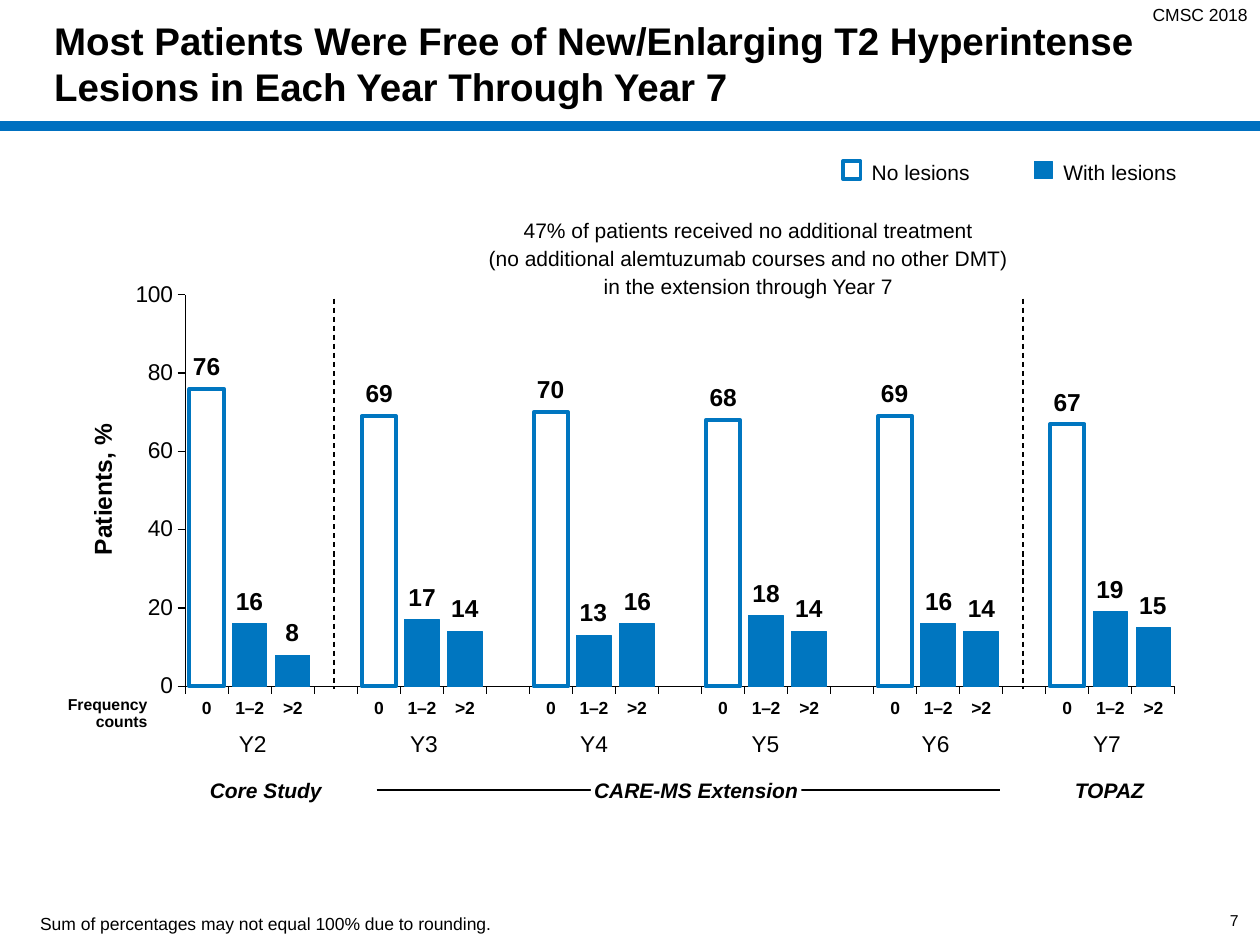
from dataclasses import dataclass

from lxml import etree
from pptx import Presentation
from pptx.chart.data import CategoryChartData
from pptx.dml.color import RGBColor
from pptx.enum.chart import XL_CHART_TYPE, XL_TICK_MARK
from pptx.enum.dml import MSO_LINE
from pptx.enum.shapes import MSO_CONNECTOR, MSO_SHAPE
from pptx.enum.text import MSO_ANCHOR, PP_ALIGN
from pptx.oxml.ns import qn
from pptx.util import Pt

COLUMN = XL_CHART_TYPE.COLUMN_CLUSTERED
OUT, NO_TICK = XL_TICK_MARK.OUTSIDE, XL_TICK_MARK.NONE
DASH = MSO_LINE.DASH
STRAIGHT = MSO_CONNECTOR.STRAIGHT
RECT = MSO_SHAPE.RECTANGLE
TOP, MID, LOW = MSO_ANCHOR.TOP, MSO_ANCHOR.MIDDLE, MSO_ANCHOR.BOTTOM
LEFT, MIDST, RIGHT = PP_ALIGN.LEFT, PP_ALIGN.CENTER, PP_ALIGN.RIGHT

SCALE = 9144  # EMU per px, 100 px to the inch


@dataclass(frozen=True)
class Theme:
    font: str = "Arial"
    ink: str = "000000"
    paper: str = "FFFFFF"
    rule: str = "0070C0"
    bar: str = "0076C0"
    title: int = 22
    value: int = 14
    axis: int = 13
    body: int = 12
    small: int = 10
    tiny: int = 9


THEME = Theme()
YEARS = {
    "Y2": (76, 16, 8),
    "Y3": (69, 17, 14),
    "Y4": (70, 13, 16),
    "Y5": (68, 18, 14),
    "Y6": (69, 16, 14),
    "Y7": (67, 19, 15),
}
COUNTS = ("0", "1–2", ">2")
STEP = len(COUNTS) + 1  # bars of one year and the gap after them
SLOTS = STEP * len(YEARS) - 1
CHART = (49, 155, 907, 476)
PLOT = {"x": 0.108, "y": 0.166, "w": 0.866, "h": 0.653}


def px(n):
    return round(n * SCALE)


def rgb(code):
    return RGBColor.from_string(code)


def style(font, size, bold=False, slant=False):
    font.name, font.size = THEME.font, Pt(size)
    font.bold, font.italic = bold, slant
    font.color.rgb = rgb(THEME.ink)


def write(frame, text, size, align=LEFT, bold=False, slant=False, space=1.0):
    para = frame.paragraphs[0]
    para.alignment, para.line_spacing = align, space
    for i, line in enumerate(text.split("\n")):
        if i:
            para.add_line_break()
        run = para.add_run()
        run.text = line
        style(run.font, size, bold, slant)


def add_text(slide, box, text, size, align=LEFT, anchor=TOP, inset=(10, 5),
             fill=None, **look):
    shape = slide.shapes.add_textbox(*map(px, box))
    if fill:
        shape.fill.solid()
        shape.fill.fore_color.rgb = rgb(fill)
    frame = shape.text_frame
    frame.word_wrap, frame.vertical_anchor = True, anchor
    frame.margin_left = frame.margin_right = px(inset[0])
    frame.margin_top = frame.margin_bottom = px(inset[1])
    write(frame, text, size, align, **look)
    return shape


def add_line(slide, start, end, color=THEME.ink, width=0.75, dash=None):
    line = slide.shapes.add_connector(STRAIGHT, *map(px, start + end))
    line.line.color.rgb = rgb(color)
    line.line.width = Pt(width)
    if dash:
        line.line.dash_style = dash
    etree.SubElement(line._element.spPr, qn("a:effectLst"))


def paint(form, fill, width):
    form.fill.solid()
    form.fill.fore_color.rgb = rgb(fill)
    form.line.color.rgb = rgb(THEME.bar)
    form.line.width = Pt(width)


def add_key(slide, left, text, fill, width):
    mark = slide.shapes.add_shape(RECT, *map(px, (left, 128, 14, 14)))
    mark.shadow.inherit = False
    paint(mark, fill, width)
    add_text(slide, (left + 13, 120, 132, 31), text, THEME.body, space=1.1)


def add_title(slide, text):
    title = slide.shapes.title
    title.left, title.top, title.width, title.height = map(px, (33, 0, 951, 100))
    title.text_frame.vertical_anchor = MID
    write(title.text_frame, text, THEME.title, bold=True)


def set_plot(chart):
    """Fix the inner plot area to the PLOT fractions."""
    area = chart._chartSpace.chart.plotArea
    for old in area.findall(qn("c:layout")):
        area.remove(old)
    layout = etree.Element(qn("c:layout"))
    area.insert(0, layout)
    manual = etree.SubElement(layout, qn("c:manualLayout"))
    marks = {"layoutTarget": "inner", "xMode": "edge", "yMode": "edge", **PLOT}
    for tag, val in marks.items():
        etree.SubElement(manual, qn("c:" + tag)).set("val", str(val))


def add_bars(slide):
    cats, vals = [], []
    for row in YEARS.values():
        cats += [*COUNTS, ""]
        vals += [*row, None]
    data = CategoryChartData()
    data.categories = cats[:SLOTS]
    data.add_series("Patients, %", vals[:SLOTS])
    chart = slide.shapes.add_chart(COLUMN, *map(px, CHART), data).chart
    chart.has_legend = chart.has_title = False
    style(chart.font, THEME.value, bold=True)
    set_plot(chart)
    plot = chart.plots[0]
    plot.gap_width, plot.vary_by_categories = 25, False
    bars = plot.series[0]
    paint(bars.format, THEME.bar, 0.5)
    for i in range(0, SLOTS, STEP):
        paint(bars.points[i].format, THEME.paper, 2.25)

    looks = ((chart.category_axis, THEME.small, True),
             (chart.value_axis, THEME.axis, False))
    for axis, size, bold in looks:
        axis.has_major_gridlines = False
        axis.major_tick_mark, axis.minor_tick_mark = OUT, NO_TICK
        axis.format.line.color.rgb = rgb(THEME.ink)
        axis.format.line.width = Pt(0.75)
        style(axis.tick_labels.font, size, bold)
    scale = chart.value_axis
    scale.minimum_scale, scale.maximum_scale, scale.major_unit = 0, 100, 20
    scale.tick_labels.number_format = "#,##0"
    scale.tick_labels.number_format_is_linked = False


def add_values(slide):
    """Set each value just above its bar."""
    left, top, wide, high = CHART
    slot = wide * PLOT["w"] / SLOTS
    start = left + wide * PLOT["x"]
    base = top + high * (PLOT["y"] + PLOT["h"])
    for i, row in enumerate(YEARS.values()):
        for j, val in enumerate(row):
            mid = round(start + slot * (STEP * i + j + 0.5))
            peak = round(base - high * PLOT["h"] * val / 100)
            add_text(slide, (mid - 23, peak - 35, 46, 34), str(val),
                     THEME.value, MIDST, bold=True)


def main():
    deck = Presentation()
    deck.slide_width, deck.slide_height = px(1000), px(750)
    slide = deck.slides.add_slide(deck.slide_layouts[5])

    add_line(slide, (0, 100), (1000, 100), THEME.rule, 5.75)
    add_bars(slide)
    add_title(slide, "Most Patients Were Free of New/Enlarging T2 Hyperintense "
                     "Lesions in Each Year Through Year 7")
    add_text(slide, (843, -2, 157, 27), "CMSC 2018", THEME.small, RIGHT)
    add_text(slide, (750, 710, 233, 40), "7", THEME.tiny, RIGHT, MID, (0, 0))
    add_text(slide, (22, 719, 942, 27),
             "Sum of percentages may not equal 100% due to rounding.",
             THEME.small, anchor=LOW)
    for x in (265, 812):
        add_line(slide, (x, 237), (x, 547), dash=DASH)
    add_values(slide)
    add_key(slide, 669, "No lesions", THEME.paper, 2.25)
    add_key(slide, 821, "With lesions", THEME.bar, 0.5)
    add_text(slide, (326, 164, 536, 80),
             "47% of patients received no additional treatment\n"
             "(no additional alemtuzumab courses and no other DMT)\n"
             "in the extension through Year 7",
             THEME.body, MIDST, MID, space=1.1)

    name = add_text(slide, (-21, 373, 207, 31), "Patients, %", THEME.value,
                    MIDST, inset=(0, 5), bold=True, space=0.9)
    name.rotation = 270
    add_text(slide, (30, 548, 87, 37), "Frequency\ncounts", THEME.tiny, RIGHT,
             inset=(0, 5), bold=True, space=0.9)
    for i, year in enumerate(YEARS):
        add_text(slide, (162 + round(135.6 * i), 574, 77, 32), year,
                 THEME.axis, MIDST)

    add_line(slide, (299, 627), (794, 627))
    for left, width, text in ((166, 90, "Core Study"),
                              (469, 167, "CARE-MS Extension"),
                              (851, 59, "TOPAZ")):
        add_text(slide, (left, 617, width, 20), text, THEME.body, MIDST, MID,
                 (0, 0), THEME.paper, bold=True, slant=True)
    deck.save("out.pptx")


if __name__ == "__main__":
    main()
